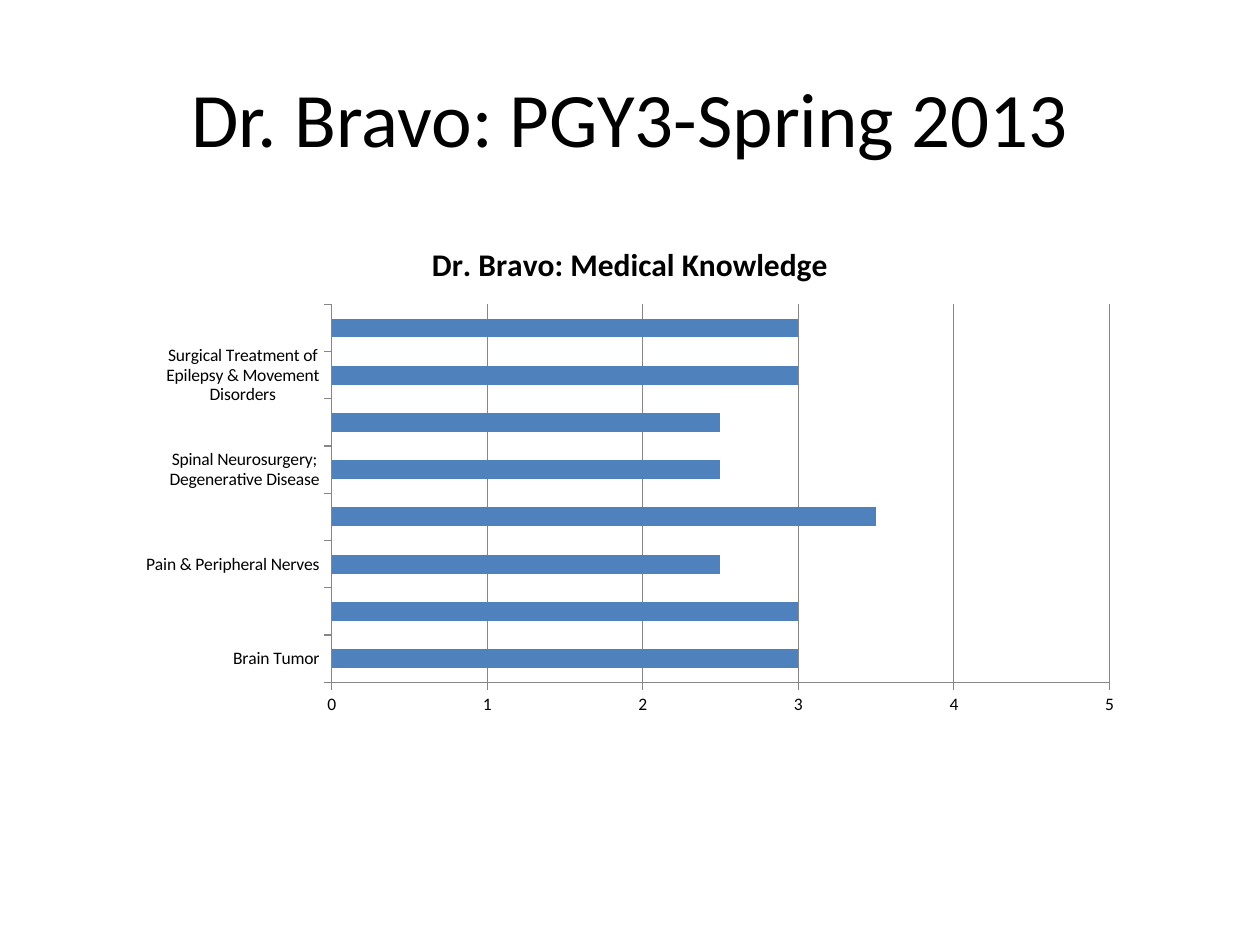
"""Build a slide with a bar chart of one resident's medical knowledge scores."""
from pptx import Presentation
from pptx.chart.data import CategoryChartData
from pptx.dml.color import RGBColor
from pptx.enum.chart import XL_CHART_TYPE as ChartType, XL_TICK_MARK as TickMark
from pptx.enum.text import MSO_ANCHOR as Anchor, PP_ALIGN as Align
from pptx.util import Pt

COLORS = {"text": "000000", "bar": "4F81BD", "line": "868686"}
FONT = "Calibri"
SCORES = [
    ("Brain Tumor", 3),
    ("", 3),
    ("Pain & Peripheral Nerves", 2.5),
    ("", 3.5),
    ("Spinal Neurosurgery; Degenerative Disease", 2.5),
    ("", 2.5),
    ("Surgical Treatment of Epilepsy & Movement Disorders", 3),
    ("", 3),
]


def apply_format(target, values):
    for name, value in values.items():
        setattr(target, name, value)


def style_font(font, size, bold=False):
    apply_format(font, {"name": FONT, "size": Pt(size), "bold": bold})
    font.color.rgb = RGBColor.from_string(COLORS["text"])


deck = Presentation()
apply_format(deck, {"slide_width": Pt(720), "slide_height": Pt(540)})
page = deck.slides.add_slide(deck.slide_layouts[6])

box = page.shapes.add_textbox(Pt(36), Pt(21.6), Pt(648), Pt(90))
apply_format(box.text_frame, {"word_wrap": True, "vertical_anchor": Anchor.MIDDLE})
para = box.text_frame.paragraphs[0]
para.alignment = Align.CENTER
span = para.add_run()
span.text = "Dr. Bravo: PGY3-Spring 2013"
style_font(span.font, 44)

labels, values = zip(*SCORES)
data = CategoryChartData()
data.categories = labels
data.add_series("Series 1", values)
chart = page.shapes.add_chart(
    ChartType.BAR_CLUSTERED, Pt(72), Pt(126), Pt(576), Pt(288), data
).chart
apply_format(chart, {"has_legend": False, "has_title": True})
style_font(chart.font, 10)

heading = chart.chart_title.text_frame.paragraphs[0].add_run()
heading.text = "Dr. Bravo: Medical Knowledge"
style_font(heading.font, 18, bold=True)

plot = chart.plots[0]
apply_format(plot, {"gap_width": 150, "vary_by_categories": False})
bar_fill = plot.series[0].format.fill
bar_fill.solid()
bar_fill.fore_color.rgb = RGBColor.from_string(COLORS["bar"])

category_axis, value_axis = chart.category_axis, chart.value_axis
apply_format(category_axis, {"has_major_gridlines": False})
apply_format(value_axis, {
    "minimum_scale": 0,
    "maximum_scale": 5,
    "major_unit": 1,
    "has_major_gridlines": True,
})
apply_format(value_axis.tick_labels, {
    "number_format": "0",
    "number_format_is_linked": False,
})
for axis in (category_axis, value_axis):
    apply_format(axis, {
        "major_tick_mark": TickMark.OUTSIDE,
        "minor_tick_mark": TickMark.NONE,
    })
for part in (category_axis, value_axis, value_axis.major_gridlines):
    part.format.line.width = Pt(0.75)
    part.format.line.color.rgb = RGBColor.from_string(COLORS["line"])

deck.save("out.pptx")
